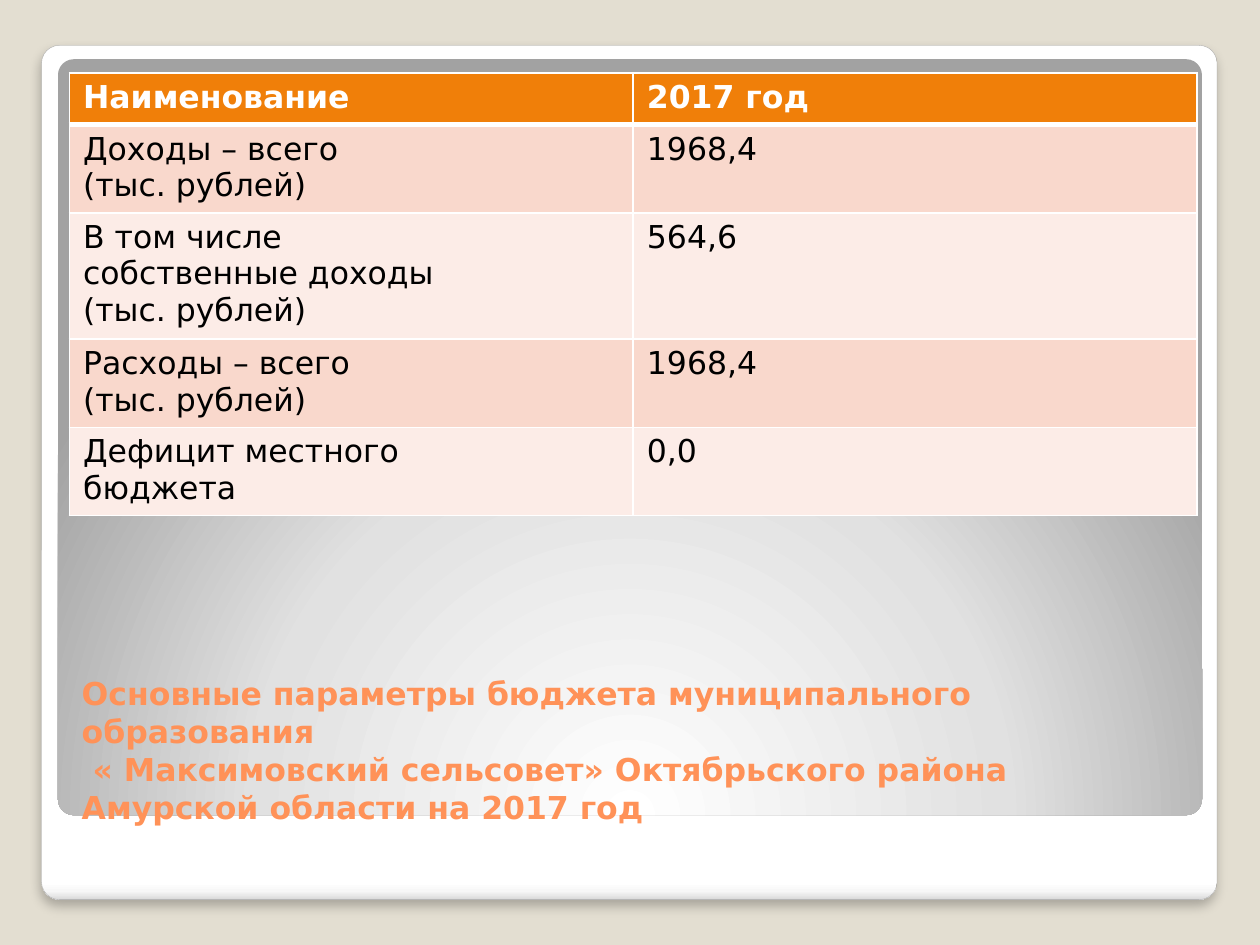
from lxml import etree
from pptx import Presentation
from pptx.dml.color import RGBColor as RGB
from pptx.enum.shapes import MSO_SHAPE as Shape
from pptx.enum.text import MSO_ANCHOR as Anchor
from pptx.oxml import parse_xml
from pptx.oxml.ns import qn
from pptx.util import Inches, Pt

FONT = "DejaVu Sans"
SIZE = 18
NS = 'xmlns:a="http://schemas.openxmlformats.org/drawingml/2006/main"'
COLORS = {
    "back": "E3DED1", "edge": "A4A4A4", "title": "FF9258",
    "head": "F07F09", "odd": "F9D8CC", "even": "FCECE7",
    "white": "FFFFFF", "black": "000000",
}
CARD = [(0, "FFFFFF"), (98, "FFFFFF"), (99, "F7F7F7"), (100, "DADADA")]
PANEL = [(0, "FFFFFF"), (55, "E1E1E1"), (100, "A2A2A2")]
DOWN = '<a:lin ang="5400000" scaled="0"/>'
ROUND = ('<a:path path="circle"><a:fillToRect l="50000" t="175000" '
         'r="50000" b="-75000"/></a:path>')
TITLE = [
    "Основные параметры бюджета муниципального образования",
    " « Максимовский сельсовет» Октябрьского района Амурской области на 2017 год",
]
# Row height, lines of the name, value
ROWS = [
    (0.41, ["Наименование"], "2017 год"),
    (0.68, ["Доходы – всего", "(тыс. рублей)"], "1968,4"),
    (0.97, ["В том числе", "собственные доходы", "(тыс. рублей)"], "564,6"),
    (0.68, ["Расходы – всего", "(тыс. рублей)"], "1968,4"),
    (0.68, ["Дефицит местного", "бюджета"], "0,0"),
]


def color(name):
    return RGB.from_string(COLORS[name])


def add_run(para, text, tint, bold):
    run = para.add_run()
    run.text = text
    font = run.font
    font.name, font.size, font.bold = FONT, Pt(SIZE), bold
    font.color.rgb = color(tint)


def add_plate(slide, box, stops, mode):
    """Rounded plate with a gradient fill."""
    plate = slide.shapes.add_shape(Shape.ROUNDED_RECTANGLE, *map(Inches, box))
    plate.adjustments[0] = 0.021
    plate.shadow.inherit = False
    plate.line.fill.background()
    plate.fill.background()
    marks = "".join(
        f'<a:gs pos="{pos * 1000}"><a:srgbClr val="{tint}"/></a:gs>'
        for pos, tint in stops)
    props = plate._element.spPr
    props.replace(props.find(qn("a:noFill")), parse_xml(
        f'<a:gradFill {NS} rotWithShape="1"><a:gsLst>{marks}</a:gsLst>'
        f'{mode}</a:gradFill>'))
    return plate


def add_shade(shape):
    """Soft shadow below the shape."""
    effects = shape._element.spPr.find(qn("a:effectLst"))
    effects.append(parse_xml(
        f'<a:outerShdw {NS} blurRad="{Pt(6)}" dist="{Pt(4)}" dir="5400000" '
        f'algn="t" rotWithShape="0"><a:srgbClr val="{COLORS["black"]}">'
        '<a:alpha val="25000"/></a:srgbClr></a:outerShdw>'))


def add_title(slide):
    box = slide.shapes.add_textbox(*map(Inches, (0.55, 5.45, 8.95, 1.15)))
    frame = box.text_frame
    frame.word_wrap = True
    frame.vertical_anchor = Anchor.BOTTOM
    para = frame.paragraphs[0]
    for num, line in enumerate(TITLE):
        if num:
            para.add_line_break()
        add_run(para, line, "title", True)


def set_edges(cell, widths):
    props = cell._tc.get_or_add_tcPr()
    for side, width in zip("LRTB", widths):
        edge = etree.SubElement(props, qn(f"a:ln{side}"), w=str(Pt(width)))
        fill = etree.SubElement(edge, qn("a:solidFill"))
        etree.SubElement(fill, qn("a:srgbClr"), val=COLORS["white"])


def fill_cell(cell, lines, row):
    head = row == 0
    set_edges(cell, (1, 1, 3 if row == 1 else 1, 3 if head else 1))
    cell.fill.solid()
    cell.fill.fore_color.rgb = color(
        "head" if head else "odd" if row % 2 else "even")
    cell.margin_left = cell.margin_right = Inches(0.11)
    cell.margin_top = cell.margin_bottom = Inches(0.05)
    frame = cell.text_frame
    for num, line in enumerate(lines):
        para = frame.add_paragraph() if num else frame.paragraphs[0]
        add_run(para, line, "white" if head else "black", head)


def add_budget(slide):
    high = sum(row[0] for row in ROWS)
    table = slide.shapes.add_table(
        len(ROWS), 2, *map(Inches, (0.55, 0.58, 8.95, high))).table
    for num, (tall, name, value) in enumerate(ROWS):
        table.rows[num].height = Inches(tall)
        for col, lines in enumerate((name, [value])):
            fill_cell(table.cell(num, col), lines, num)


def main():
    deck = Presentation()
    deck.slide_width, deck.slide_height = Inches(10), Inches(7.5)
    slide = deck.slides.add_slide(deck.slide_layouts[6])
    slide.background.fill.solid()
    slide.background.fill.fore_color.rgb = color("back")

    # Card and inner panel
    card = add_plate(slide, (0.33, 0.36, 9.33, 6.78), CARD, DOWN)
    card.line.color.rgb = color("edge")
    card.line.width = Pt(0.16)
    add_shade(card)
    add_plate(slide, (0.46, 0.47, 9.08, 6), PANEL, ROUND)

    # Title and budget table
    add_title(slide)
    add_budget(slide)
    deck.save("out.pptx")


if __name__ == "__main__":
    main()
